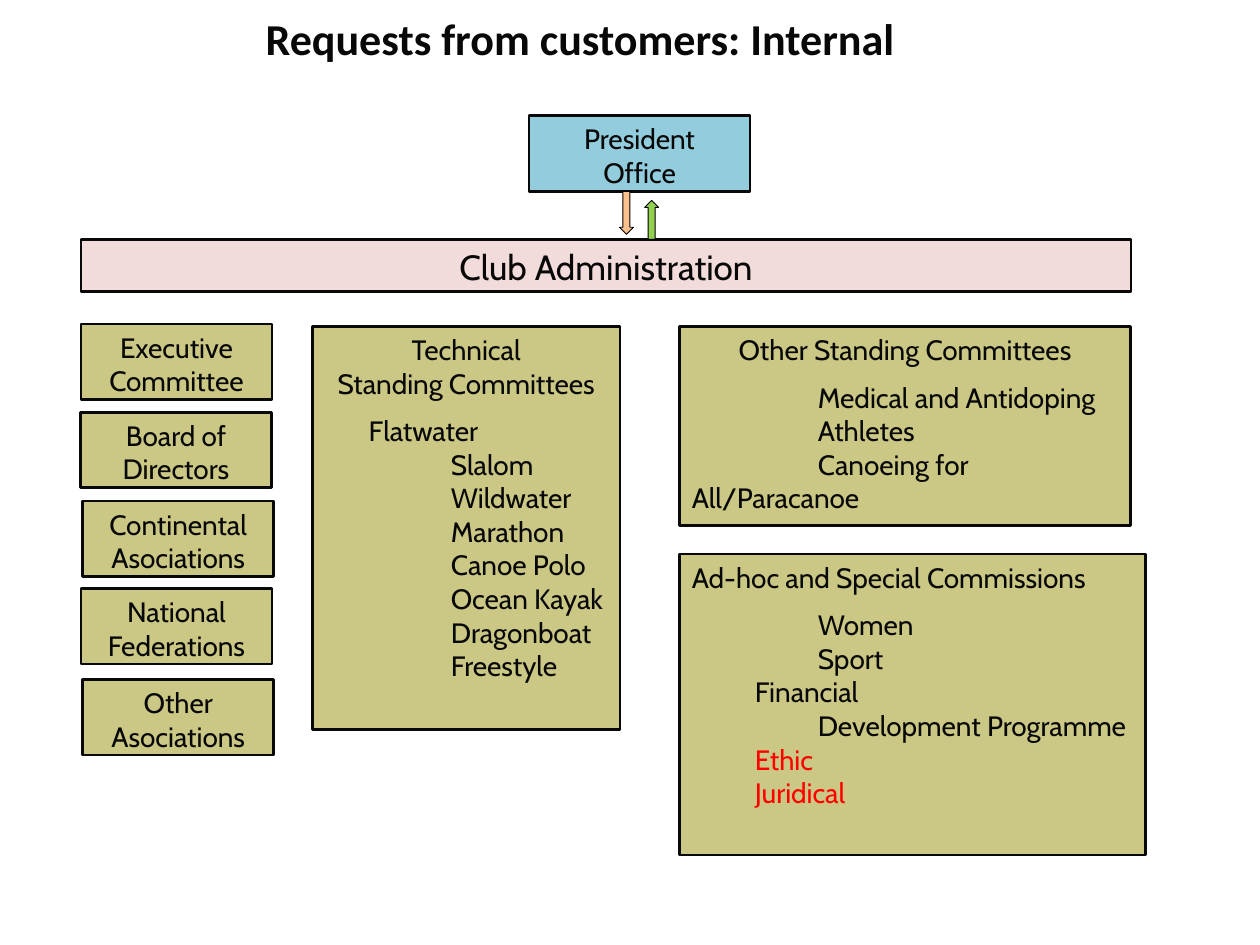
import pptx
import pptx.util
import pptx.dml.color
import pptx.enum.shapes
import pptx.enum.text

Pt = pptx.util.Pt
SHAPE = pptx.enum.shapes.MSO_SHAPE
ALIGN = pptx.enum.text.PP_ALIGN
ANCHOR = pptx.enum.text.MSO_ANCHOR
INK, OLIVE, RED = "080808", "CBC885", "FF0000"


def rgb(value):
    return pptx.dml.color.RGBColor.from_string(value)


def add_text(tf, text, size=16, font="Cabin", color=INK, bold=False,
             align=ALIGN.LEFT, indent=0, before=0):
    """Fill the first paragraph if it is empty, otherwise append one."""
    p = tf.paragraphs[0] if not tf.text else tf.add_paragraph()
    p.alignment = align
    p.space_before = Pt(before)
    if indent:
        p._p.get_or_add_pPr().set("indent", str(Pt(indent)))
    r = p.add_run()
    r.text = text
    r.font.size, r.font.name, r.font.bold = Pt(size), font, bold
    r.font.color.rgb = rgb(color)


prs = pptx.Presentation()
prs.slide_width, prs.slide_height = Pt(720), Pt(540)
s = prs.slides.add_slide(prs.slide_layouts[6])

# Title
sp = s.shapes.add_textbox(Pt(144.7), Pt(5.8), Pt(499), Pt(31.7))
sp.text_frame.word_wrap = True
sp.text_frame.vertical_anchor = ANCHOR.MIDDLE
add_text(sp.text_frame, "Requests from customers: Internal",
         size=25.2, font="Calibri", bold=True)

# Boxes: left, top, width, height, fill, lines of (text, format)
center = {"align": ALIGN.CENTER}
tab, half_tab = {"indent": 72}, {"indent": 36}
boxes = [
    (46.3, 137, 600, 29.5, "F2DCDB",
     [("Club Administration", {"size": 20, **center})]),
    (302.4, 66.2, 126.2, 43.2, "93CDDD",
     [("President", center), ("Office", center)]),
    (178.6, 186.5, 175.7, 230.4, OLIVE,
     [("Technical", center), ("Standing Committees", center),
      ("Flatwater", {"indent": 25, "before": 8})]
     + [(name, tab) for name in ("Slalom", "Wildwater", "Marathon", "Canoe Polo",
                                 "Ocean Kayak", "Dragonboat", "Freestyle")]),
    (388.3, 186.5, 257.8, 113.8, OLIVE,
     [("Other Standing Committees", center),
      ("Medical and Antidoping", {"before": 8, **tab}),
      ("Athletes", tab), ("Canoeing for All/Paracanoe", tab)]),
    (388.3, 316.6, 266.4, 172, OLIVE,
     [("Ad-hoc and Special Commissions", {}),
      ("Women", {"before": 8, **tab}), ("Sport", tab),
      ("Financial", half_tab), ("Development Programme", tab),
      ("Ethic", {"color": RED, **half_tab}),
      ("Juridical", {"color": RED, **half_tab})]),
]

# Left column of single-name boxes
for left, top, name in [(46.3, 185.2, "Executive Committee"),
                        (46, 235.6, "Board of Directors"),
                        (47.3, 286.4, "Continental Asociations"),
                        (46.3, 336.4, "National Federations"),
                        (47.3, 388.3, "Other Asociations")]:
    boxes.append((left, top, 109.2, 43.2, OLIVE, [(name, center)]))

for left, top, width, height, fill, lines in boxes:
    sp = s.shapes.add_shape(SHAPE.RECTANGLE, Pt(left), Pt(top), Pt(width), Pt(height))
    sp.shadow.inherit = False
    sp.fill.solid()
    sp.fill.fore_color.rgb = rgb(fill)
    sp.line.color.rgb = rgb(INK)
    sp.line.width = Pt(1.5)
    tf = sp.text_frame
    tf.word_wrap = True
    tf.vertical_anchor = ANCHOR.TOP
    for text, style in lines:
        add_text(tf, text, **style)

# Arrows between president and administration
for kind, left, top, height, fill in [(SHAPE.UP_ARROW, 368.4, 114.5, 22.3, "92D050"),
                                      (SHAPE.DOWN_ARROW, 354, 109.4, 24.5, "FAC090")]:
    sp = s.shapes.add_shape(kind, Pt(left), Pt(top), Pt(8), Pt(height))
    sp.shadow.inherit = False
    sp.fill.solid()
    sp.fill.fore_color.rgb = rgb(fill)
    sp.line.color.rgb = rgb("000000")
    sp.line.width = Pt(0.5)

prs.save("out.pptx")
